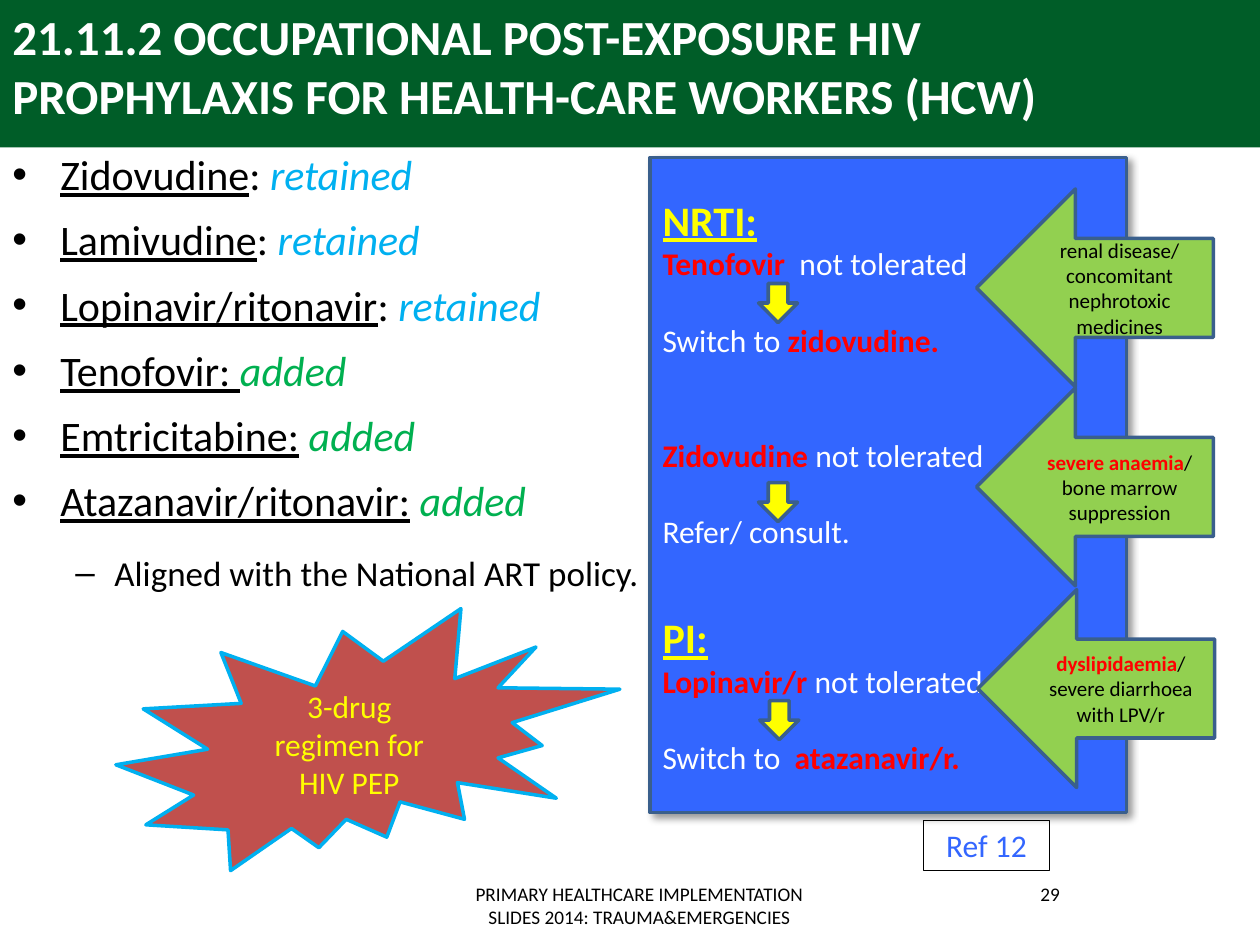
import pptx
import pptx.util
import pptx.dml.color
import pptx.enum.shapes
import pptx.enum.text
import pptx.oxml
import pptx.oxml.ns

Inches = pptx.util.Inches
Pt = pptx.util.Pt
Shape = pptx.enum.shapes.MSO_SHAPE
Align = pptx.enum.text.PP_ALIGN
Anchor = pptx.enum.text.MSO_ANCHOR

COLORS = {
    "dark": "005D28", "white": "FFFFFF", "black": "000000", "blue": "3366FF",
    "edge": "3A5F8C", "lime": "92D050", "yellow": "FFFF00", "red": "FF0000",
    "sky": "00B0F0", "green": "00B050", "brick": "C0504D",
}


class Deck:
    def __init__(self, font="Calibri"):
        self.font = font
        self.file = pptx.Presentation()
        self.file.slide_width = Inches(10)
        self.file.slide_height = Inches(7.5)
        self.slide = self.file.slides.add_slide(self.file.slide_layouts[6])

    def color(self, name):
        return pptx.dml.color.RGBColor.from_string(COLORS[name])

    def shape(self, kind, box, fill=None, line=None, width=2):
        item = self.slide.shapes.add_shape(kind, *map(Inches, box))
        item.shadow.inherit = False
        if fill:
            item.fill.solid()
            item.fill.fore_color.rgb = self.color(fill)
        else:
            item.fill.background()
        if line:
            item.line.color.rgb = self.color(line)
            item.line.width = Pt(width)
        else:
            item.line.fill.background()
        item.text_frame.vertical_anchor = Anchor.MIDDLE
        return item

    def box(self, box):
        item = self.slide.shapes.add_textbox(*map(Inches, box))
        item.text_frame.word_wrap = True
        return item

    def shade(self, item):
        """Give the shape a soft shadow to its lower right."""
        item.shadow.inherit = False
        space = pptx.oxml.ns.nsdecls("a")
        outer = pptx.oxml.parse_xml(
            f'<a:outerShdw {space} blurRad="{Pt(4)}" dist="{Pt(3)}" dir="2700000" algn="tl" '
            f'rotWithShape="0"><a:srgbClr val="{COLORS["black"]}"><a:alpha val="40000"/>'
            '</a:srgbClr></a:outerShdw>')
        item._element.spPr.find(pptx.oxml.ns.qn("a:effectLst")).append(outer)

    def text(self, item, runs, size, align=Align.LEFT, before=0, space=None, mark=None):
        """Add a paragraph of (words, colour, style) runs; style letters are b, i, u.

        mark is (bullet, left margin, hanging indent).
        """
        frame = item.text_frame
        para = frame.paragraphs[0]
        if para.runs:
            para = frame.add_paragraph()
        para.alignment = align
        para.space_before = Pt(before)
        if space:
            para.line_spacing = space
        if mark:
            sign, left, hang = mark
            props = para._p.get_or_add_pPr()
            props.set("marL", str(Inches(left)))
            props.set("indent", str(-Inches(hang)))
            names = pptx.oxml.ns.nsdecls("a")
            props.append(pptx.oxml.parse_xml(f'<a:buFont {names} typeface="Arial"/>'))
            props.append(pptx.oxml.parse_xml(f'<a:buChar {names} char="{sign}"/>'))
        para.font.name = self.font
        para.font.size = Pt(size)
        tones = {tone for _, tone, _ in runs}
        if len(tones) == 1:
            para.font.color.rgb = self.color(runs[0][1])
        for words, tone, style in runs:
            run = para.add_run()
            run.text = words
            if len(tones) > 1:
                run.font.color.rgb = self.color(tone)
            if "b" in style:
                run.font.bold = True
            if "i" in style:
                run.font.italic = True
            if "u" in style:
                run.font.underline = True


def main():
    deck = Deck()

    deck.shape(Shape.RECTANGLE, (0, 0, 10, 1.17), "dark")
    title = deck.box((0, 0, 9, 1.25))
    deck.text(title, [("21.11.2 OCCUPATIONAL POST-EXPOSURE HIV PROPHYLAXIS "
                       "FOR HEALTH-CARE WORKERS (HCW)", "white", "b")], 28)

    drugs = [
        ("Zidovudine", ": ", "retained"),
        ("Lamivudine", ": ", "retained"),
        ("Lopinavir/ritonavir", ": ", "retained"),
        ("Tenofovir: ", "", "added"),
        ("Emtricitabine:", " ", "added"),
        ("Atazanavir/ritonavir:", " ", "added"),
    ]
    tones = {"retained": "sky", "added": "green"}
    body = deck.box((0, 1.07, 5.39, 5.11))
    for drug, gap, state in drugs:
        runs = [(drug, "black", "u"), (gap, "black", ""), (state, tones[state], "i")]
        deck.text(body, [run for run in runs if run[0]], 24, before=4.2,
                  space=1.15, mark=("•", 0.38, 0.38))
    deck.text(body, [("Aligned with the National ART policy.", "black", "")], 20,
              before=15, mark=("–", 0.81, 0.31))

    number = deck.box((7.17, 6.95, 2.33, 0.4))
    deck.text(number, [("29", "black", "")], 11, Align.CENTER)
    footer = deck.box((3.2, 6.95, 3.75, 0.4))
    for words in ("PRIMARY HEALTHCARE IMPLEMENTATION", "SLIDES 2014: TRAUMA&EMERGENCIES"):
        deck.text(footer, [(words, "black", "")], 11, Align.CENTER)

    panel = deck.shape(Shape.RECTANGLE, (5.16, 1.25, 3.78, 5.2), "blue", "edge")
    deck.shade(panel)
    row = 22  # height of one 18 pt line
    steps = [
        (24, 0, [("NRTI:", "yellow", "bu")]),
        (18, 0, [("Tenofovir ", "red", "b"), (" not tolerated", "white", "")]),
        (18, row, [("Switch to ", "white", ""), ("zidovudine.", "red", "b")]),
        (18, 2 * row, [("Zidovudine ", "red", "b"), ("not tolerated", "white", "")]),
        (18, row, [("Refer/ consult.", "white", "")]),
        (24, 35.4, [("PI:", "yellow", "bu")]),
        (18, 0, [("Lopinavir/r", "red", "b"), (" not tolerated", "white", "")]),
        (18, row, [("Switch to  ", "white", ""), ("atazanavir/r.", "red", "b")]),
    ]
    for size, before, runs in steps:
        deck.text(panel, runs, size, before=before)

    causes = [
        (7.75, 1.5, [("renal disease/ concomitant nephrotoxic medicines", "black", "")]),
        (7.75, 3.08, [("severe anaemia", "red", "b"),
                      ("/ bone marrow suppression", "black", "")]),
        (7.76, 4.68, [("dyslipidaemia", "red", "b"),
                      ("/ severe diarrhoea with LPV/r", "black", "")]),
    ]
    for left, top, runs in causes:
        arrow = deck.shape(Shape.LEFT_ARROW, (left, top, 1.88, 1.57), "lime", "edge")
        deck.text(arrow, runs, 12, Align.CENTER)

    for left, top in ((6.02, 2.25), (6.02, 3.83), (6.03, 5.56)):
        deck.shape(Shape.DOWN_ARROW, (left, top, 0.31, 0.31), "yellow", "edge")

    burst = deck.shape(Shape.EXPLOSION2, (0.92, 4.83, 4, 2.08), "brick", "sky")
    deck.text(burst, [("3-drug regimen for HIV PEP", "yellow", "")], 18, Align.CENTER)

    ref = deck.shape(Shape.RECTANGLE, (7.33, 6.51, 1, 0.4), None, "black", 0.25)
    deck.text(ref, [("Ref 12", "blue", "")], 18, Align.CENTER)

    deck.file.save("out.pptx")


if __name__ == "__main__":
    main()
